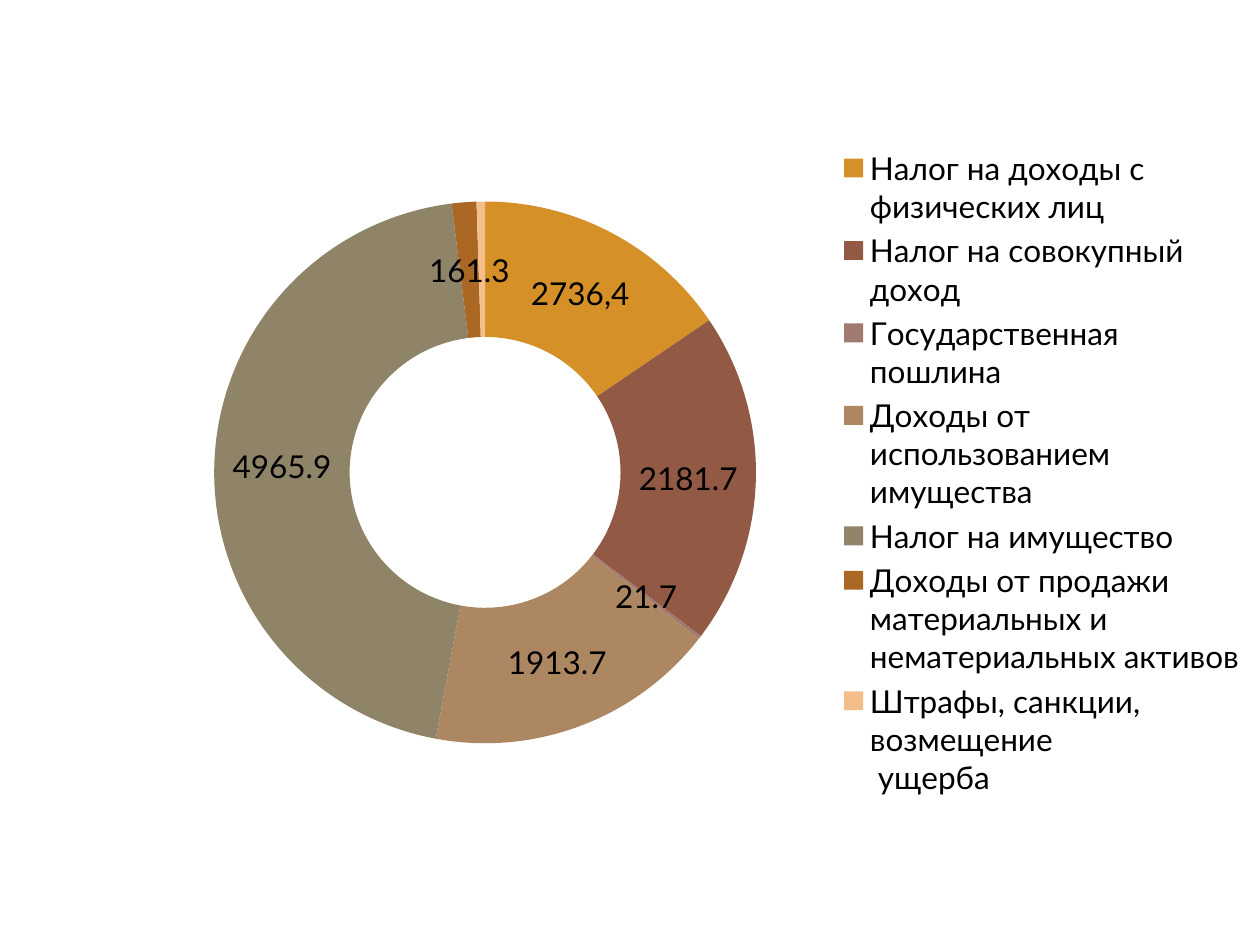
"""Build a slide with a doughnut chart of budget revenue by source."""
from lxml.etree import SubElement
from pptx import Presentation
from pptx.chart.data import CategoryChartData
from pptx.dml.color import RGBColor
from pptx.enum.chart import XL_CHART_TYPE as ChartType, XL_LEGEND_POSITION as LegendPosition
from pptx.oxml import parse_xml
from pptx.oxml.ns import nsdecls, qn
from pptx.util import Pt

REVENUES = [
    ("Налог на доходы с физических лиц", 1707.2, RGBColor(0xD5, 0x90, 0x28)),
    ("Налог на совокупный доход", 2181.7, RGBColor(0x92, 0x59, 0x45)),
    ("Государственная пошлина", 21.7, RGBColor(0xA0, 0x7A, 0x70)),
    ("Доходы от использованием имущества", 1913.7, RGBColor(0xAD, 0x87, 0x62)),
    ("Налог на имущество", 4965.9, RGBColor(0x8F, 0x84, 0x68)),
    ("Доходы от продажи материальных и нематериальных активов", 161.3, RGBColor(0xAB, 0x67, 0x24)),
    ("Штрафы, санкции, возмещение\n ущерба", 55.5, RGBColor(0xF4, 0xBE, 0x8B)),
]
INCOME_TAX_LABEL = "2736,4"
UNLABELLED = len(REVENUES) - 1
RING_AREA = {"x": 0.17, "y": 0.21, "w": 0.43, "h": 0.58}
SLIDE_SIZE = Pt(720), Pt(540)
FONT, FONT_SIZE = "Lato", Pt(18)
BLACK = RGBColor(0, 0, 0)


def style(font):
    font.name, font.size = FONT, FONT_SIZE
    font.color.rgb = BLACK


def place_ring(plot_area):
    for old in plot_area.findall(qn("c:layout")):
        plot_area.remove(old)
    layout = parse_xml(f"<c:layout {nsdecls('c')}/>")
    manual = SubElement(layout, qn("c:manualLayout"))
    settings = {"layoutTarget": "inner", "xMode": "edge", "yMode": "edge", **RING_AREA}
    for tag, value in settings.items():
        SubElement(manual, qn(f"c:{tag}")).set("val", str(value))
    plot_area.insert(0, layout)


def label_ring(revenue):
    labels = revenue.data_labels
    labels.show_value = True
    style(labels.font)
    run = revenue.points[0].data_label.text_frame.paragraphs[0].add_run()
    run.text = INCOME_TAX_LABEL
    style(run.font)
    hidden = parse_xml(
        f'<c:dLbl {nsdecls("c")}><c:idx val="{UNLABELLED}"/><c:delete val="1"/></c:dLbl>')
    labels._element.insert(1, hidden)


def main():
    deck = Presentation()
    deck.slide_width, deck.slide_height = SLIDE_SIZE
    slide = deck.slides.add_slide(deck.slide_layouts[6])

    data = CategoryChartData()
    data.categories = [name for name, _, _ in REVENUES]
    data.add_series("Series 1", [amount for _, amount, _ in REVENUES])
    chart = slide.shapes.add_chart(ChartType.DOUGHNUT, 0, 0, *SLIDE_SIZE, data).chart
    style(chart.font)
    chart.has_title = False
    chart.has_legend = True
    chart.legend.position = LegendPosition.RIGHT
    chart.legend.include_in_layout = False
    style(chart.legend.font)
    chart.plots[0].vary_by_categories = True

    revenue = chart.plots[0].series[0]
    for index, (_, _, colour) in enumerate(REVENUES):
        fill = revenue.points[index].format.fill
        fill.solid()
        fill.fore_color.rgb = colour
    label_ring(revenue)
    place_ring(chart.plots[0]._element.getparent())
    deck.save("out.pptx")


if __name__ == "__main__":
    main()
